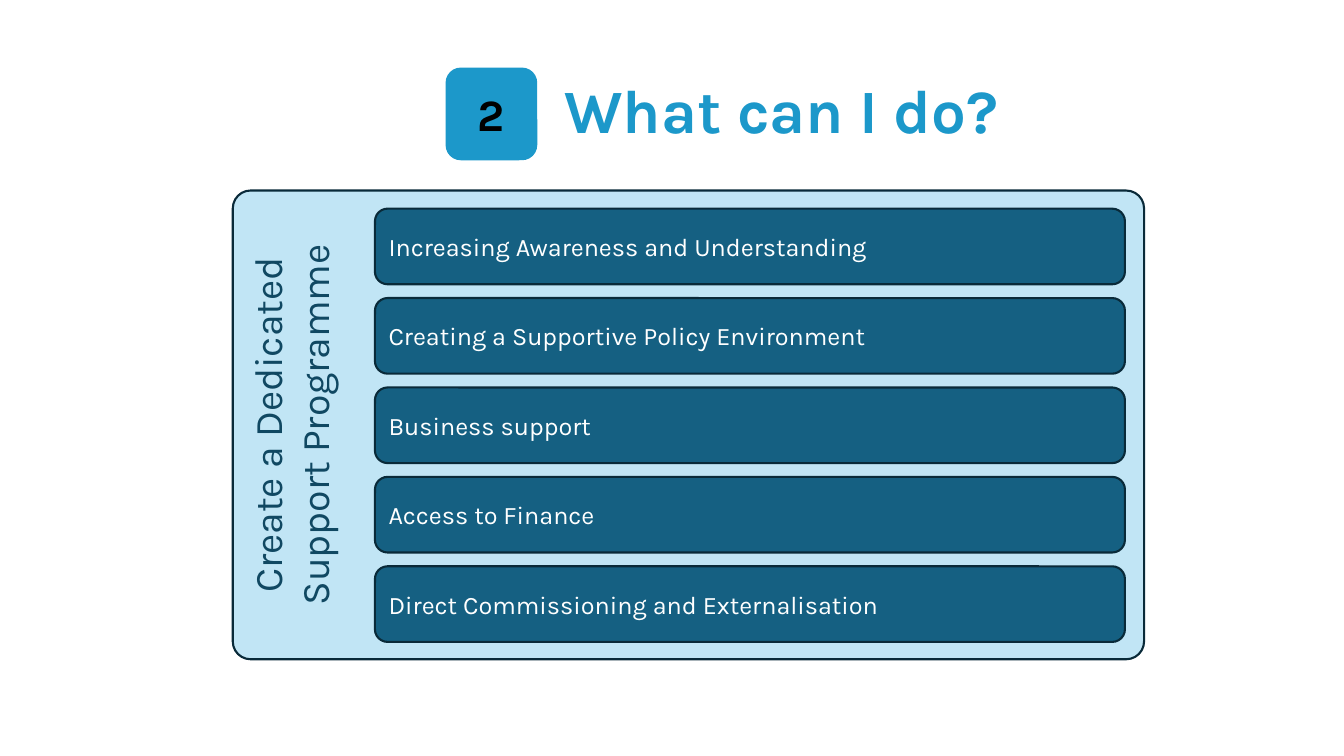
from pptx import Presentation
from pptx import util as u
from pptx.dml.color import RGBColor
from pptx.enum import shapes, text

COLOURS = {
    "accent": "1C98CA",
    "number": "000000",
    "panel": "C1E5F5",
    "panel text": "104862",
    "bar": "156082",
    "bar text": "FFFFFF",
    "outline": "092A39",
}
FONT = "Karla"
STEPS = [
    "Increasing Awareness and Understanding",
    "Creating a Supportive Policy Environment",
    "Business support",
    "Access to Finance",
    "Direct Commissioning and Externalisation",
]
BAR_TOP, BAR_PITCH, BAR_HEIGHT = 2.07, 0.887, 0.75


def write(shape, words, size, colour, align, anchor, bold=False):
    frame = shape.text_frame
    frame.text = words
    frame.word_wrap = True
    frame.vertical_anchor = anchor
    para = frame.paragraphs[0]
    para.alignment = align
    font = para.runs[0].font
    font.name, font.size, font.bold = FONT, u.Pt(size), bold
    font.color.rgb = RGBColor.from_string(COLOURS[colour])


def rounded_box(left, top, width, height, fill, outlined=True):
    box = page.shapes.add_shape(
        shapes.MSO_SHAPE.ROUNDED_RECTANGLE,
        u.Inches(left), u.Inches(top), u.Inches(width), u.Inches(height))
    box.shadow.inherit = False
    box.fill.solid()
    box.fill.fore_color.rgb = RGBColor.from_string(COLOURS[fill])
    if outlined:
        box.line.color.rgb = RGBColor.from_string(COLOURS["outline"])
        box.line.width = u.Pt(1.5)
    else:
        box.line.fill.background()
    return box


deck = Presentation()
deck.slide_width, deck.slide_height = u.Inches(13.333), u.Inches(7.5)
page = deck.slides.add_slide(deck.slide_layouts[5])
left, centre = text.PP_ALIGN.LEFT, text.PP_ALIGN.CENTER
top, middle = text.MSO_ANCHOR.TOP, text.MSO_ANCHOR.MIDDLE

# Title with its number badge
title = page.shapes.title
title.left, title.top = u.Inches(4.42), u.Inches(0.4)
title.width, title.height = u.Inches(8), u.Inches(1.45)
write(title, "What can I do?", 44, "accent", left, middle, bold=True)
title.text_frame.margin_left = u.Inches(1.18)
title.text_frame.auto_size = text.MSO_AUTO_SIZE.NONE
title.text_frame.paragraphs[0].line_spacing = 0.9

badge = rounded_box(4.42, 0.67, 0.91, 0.92, "accent", outlined=False)
write(badge, "2", 32, "number", centre, middle, bold=True)

# Programme panel with its upright label
panel = rounded_box(2.31, 1.89, 9.04, 4.65, "panel")
panel.adjustments[0] = 0.038
write(panel, "Create a Dedicated Support Programme", 28, "panel text", centre, top)
panel.text_frame._txBody.bodyPr.set("vert", "vert270")

# One bar for each step
for row, step in enumerate(STEPS):
    bar = rounded_box(3.72, BAR_TOP + row * BAR_PITCH, 7.44, BAR_HEIGHT, "bar")
    write(bar, step, 18, "bar text", left, middle)

deck.save("out.pptx")
